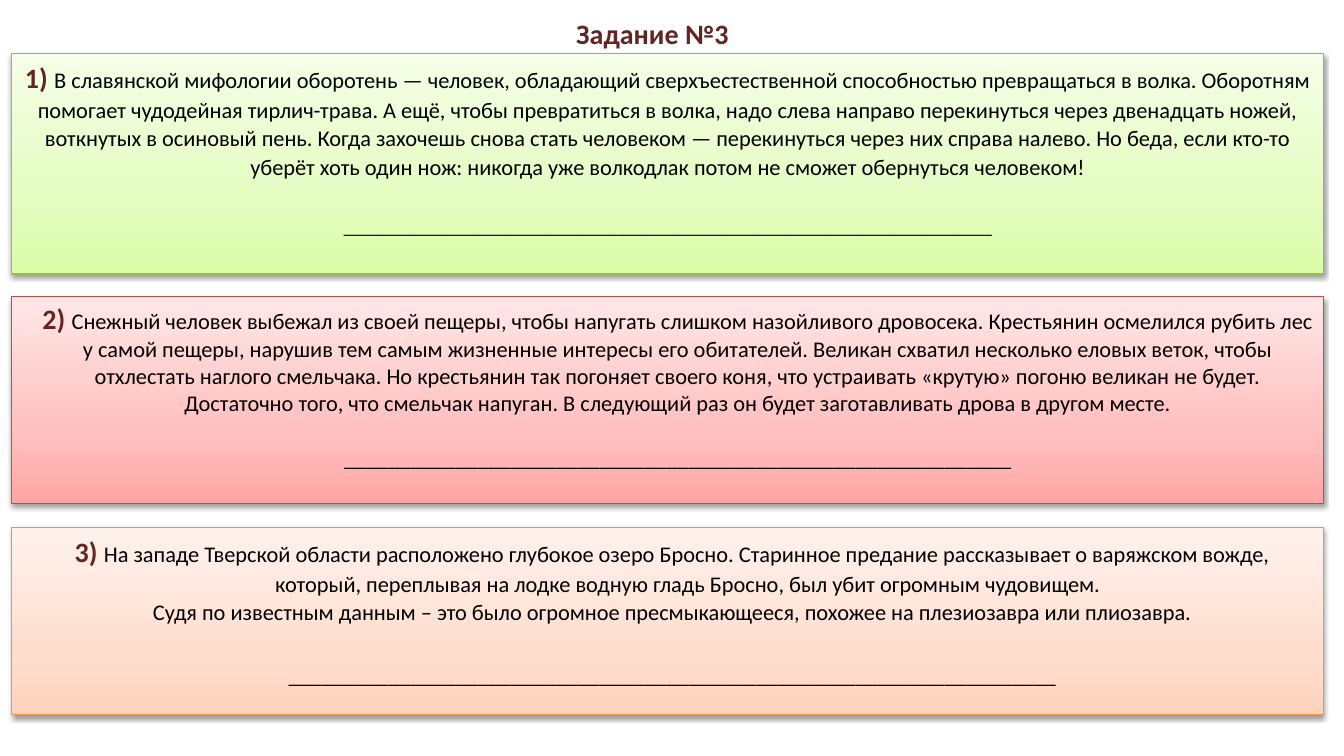
from copy import deepcopy
from pptx import Presentation
from pptx import util as u
from pptx.dml import color
from pptx.enum import shapes, text
from pptx.oxml import parse_xml

PX = 12192000 / 1344
FRAME_LEFT, FRAME_WIDTH = 12, 1312
MAROON = "632523"
SHADOW = (
    '<a:outerShdw xmlns:a="http://schemas.openxmlformats.org/drawingml/2006/main" '
    'blurRad="40000" dist="20000" dir="5400000" rotWithShape="0">'
    '<a:srgbClr val="000000"><a:alpha val="38000"/></a:srgbClr></a:outerShdw>'
)


def rgb(value):
    return color.RGBColor.from_string(value)


def add_text(para, words, size=16, font="Calibri", ink="000000", bold=False):
    span = para.add_run()
    span.text = words
    span.font.size = u.Pt(size)
    span.font.name = font
    span.font.color.rgb = rgb(ink)
    span.font.bold = bold


tasks = [
    dict(top=53, height=221, stops=("DAFDA7", "E4FCC2", "F5FFE7"), line="98B955",
         margin=0, indent=0, spacing=1.07, gap=21, blanks=58, blank_font="Times New Roman",
         story=["В славянской мифологии оборотень — человек, обладающий сверхъестественной "
                "способностью превращаться в волка. Оборотням помогает чудодейная тирлич-трава. "
                "А ещё, чтобы превратиться в волка, надо слева направо перекинуться через "
                "двенадцать ножей, воткнутых в осиновый пень. Когда захочешь снова стать "
                "человеком — перекинуться через них справа налево. Но беда, если кто-то уберёт "
                "хоть один нож: никогда уже волкодлак потом не сможет обернуться человеком!"]),
    dict(top=297, height=207, stops=("FFA6A5", "FFC0BF", "FFE7E7"), line="BF4C48",
         margin=20, indent=0, spacing=1.0, gap=20, blanks=60, blank_font="Calibri",
         story=["Снежный человек выбежал из своей пещеры, чтобы напугать слишком назойливого "
                "дровосека. Крестьянин осмелился рубить лес у самой пещеры, нарушив тем самым "
                "жизненные интересы его обитателей. Великан схватил несколько еловых веток, "
                "чтобы отхлестать наглого смельчака. Но крестьянин так погоняет своего коня, "
                "что устраивать «крутую» погоню великан не будет. Достаточно того, что смельчак "
                "напуган. В следующий раз он будет заготавливать дрова в другом месте."]),
    dict(top=527, height=188, stops=("FFD2BD", "FFDED0", "FFF2ED"), line="F69240",
         margin=40, indent=-31, spacing=1.07, gap=24, blanks=69, blank_font="Calibri",
         story=["На западе Тверской области расположено глубокое озеро Бросно. Старинное "
                "предание рассказывает о варяжском вожде, который, переплывая на лодке водную "
                "гладь Бросно, был убит огромным чудовищем.",
                "Судя по известным данным – это было огромное пресмыкающееся, похожее на "
                "плезиозавра или плиозавра."]),
]

deck = Presentation()
deck.slide_width, deck.slide_height = u.Emu(12192000), u.Emu(6858000)
page = deck.slides.add_slide(deck.slide_layouts[6])

title = page.shapes.add_textbox(*(round(n * PX) for n in (0, 12, 1305, 42)))
title.text_frame.word_wrap = True
title.text_frame.vertical_anchor = text.MSO_ANCHOR.MIDDLE
heading = title.text_frame.paragraphs[0]
heading.alignment = text.PP_ALIGN.CENTER
add_text(heading, "Задание №3", size=20, ink=MAROON, bold=True)

for number, task in enumerate(tasks, 1):
    frame = (FRAME_LEFT, task["top"], FRAME_WIDTH, task["height"])
    box = page.shapes.add_shape(shapes.MSO_SHAPE.RECTANGLE, *(round(n * PX) for n in frame))
    box.line.color.rgb = rgb(task["line"])
    box.line.width = u.Pt(0.75)

    box.fill.gradient()
    box.fill.gradient_angle = 90
    stop_list = box.element.spPr.xpath(".//a:gsLst")[0]
    stop_list.insert(1, deepcopy(stop_list[0]))
    for stop, position, shade in zip(box.fill.gradient_stops, (0, 0.35, 1), task["stops"]):
        stop.position = position
        stop.color.rgb = rgb(shade)

    box.shadow.inherit = False
    box.element.spPr.xpath("a:effectLst")[0].append(parse_xml(SHADOW))

    body = box.text_frame
    body.word_wrap = True
    body.vertical_anchor = text.MSO_ANCHOR.TOP
    rows = task["story"] + ["_" * task["blanks"]]
    for index, words in enumerate(rows):
        is_answer = index == len(rows) - 1
        para = body.add_paragraph() if index else body.paragraphs[0]
        para.alignment = text.PP_ALIGN.CENTER
        para.line_spacing = task["spacing"]
        properties = para._p.get_or_add_pPr()
        properties.set("marL", str(round(task["margin"] * PX)))
        properties.set("indent", str(round(task["indent"] * PX)))
        if index == 0:
            add_text(para, f"{number}) ", size=20, ink=MAROON, bold=True)
        if is_answer:
            para.space_before = u.Pt(task["gap"])
        add_text(para, words, font=task["blank_font"] if is_answer else "Calibri")

deck.save("out.pptx")
